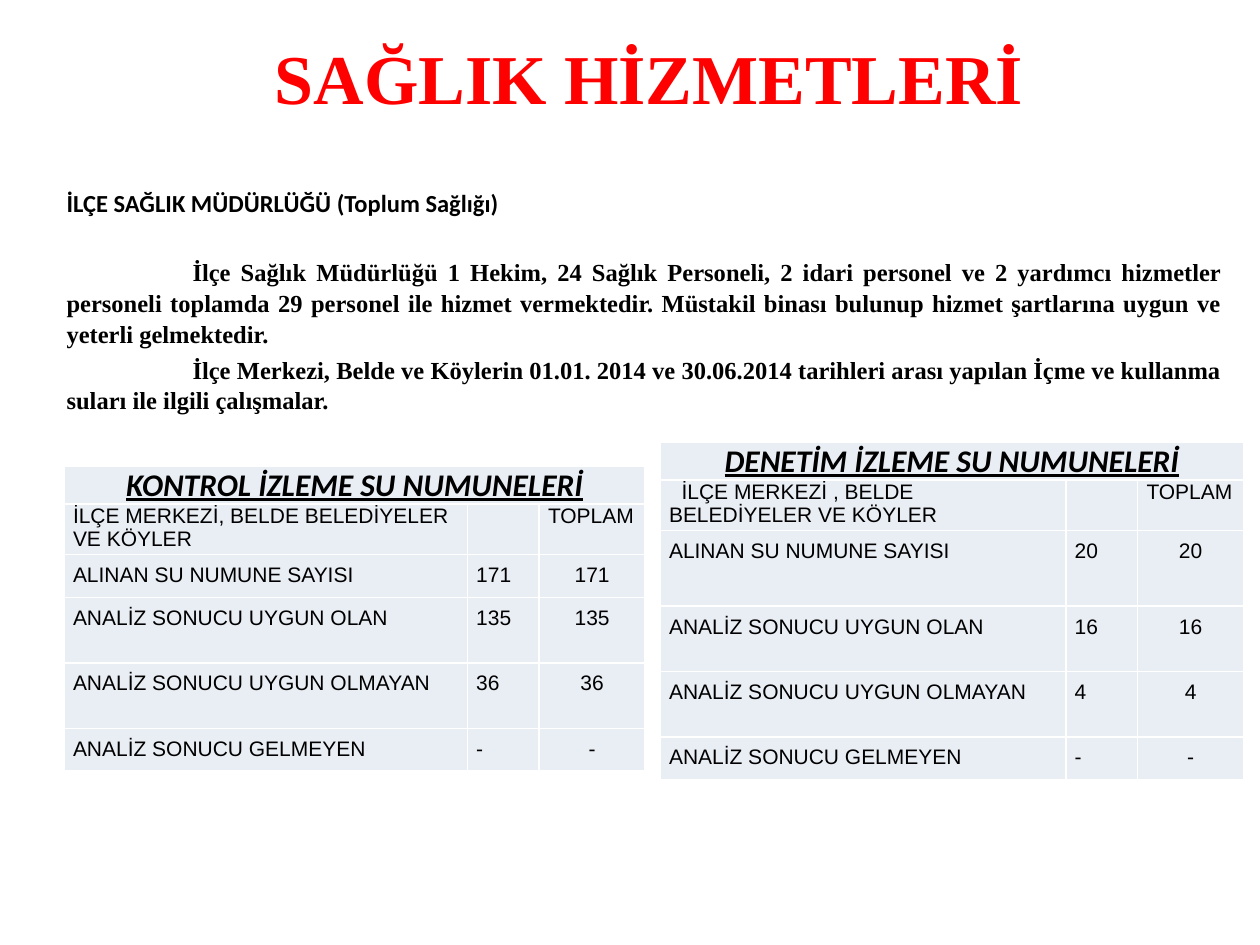
from pptx import Presentation
from pptx.dml.color import RGBColor
from pptx.enum.text import MSO_ANCHOR as Anchor, PP_ALIGN as Align
from pptx.util import Inches, Pt

COLORS = {"title": "FF0000", "text": "000000", "cell": "E9EDF4"}
SERIF, SANS, BODY = "Times New Roman", "Arial", "Calibri"
INSET = 0.07
HEADING = "İLÇE SAĞLIK MÜDÜRLÜĞÜ (Toplum Sağlığı)"
STAFF = (
    "İlçe Sağlık Müdürlüğü 1 Hekim, 24 Sağlık Personeli, 2 idari personel ve 2 yardımcı "
    "hizmetler personeli toplamda 29 personel ile hizmet vermektedir. Müstakil binası "
    "bulunup hizmet şartlarına uygun ve yeterli gelmektedir."
)
WATER = (
    "İlçe Merkezi, Belde ve Köylerin 01.01. 2014 ve 30.06.2014 tarihleri arası yapılan "
    "İçme ve kullanma suları ile ilgili çalışmalar."
)
SAMPLE_LABELS = [
    "ALINAN SU NUMUNE SAYISI",
    "ANALİZ SONUCU UYGUN OLAN",
    "ANALİZ SONUCU UYGUN OLMAYAN",
    "ANALİZ SONUCU GELMEYEN",
]


def write(para, text, font, size, align, color="text", bold=False, indent=0):
    para.add_run().text = text
    para.alignment = align
    if indent:
        para._p.get_or_add_pPr().set("indent", str(Inches(indent)))
    para.font.name = font
    para.font.size = Pt(size)
    para.font.bold = bold
    para.font.color.rgb = RGBColor.from_string(COLORS[color])


def add_box(page, left, top, width, height):
    box = page.shapes.add_textbox(*map(Inches, (left, top, width, height)))
    box.text_frame.word_wrap = True
    return box.text_frame


def add_title(page):
    frame = add_box(page, 0.9, 0.21, 8.5, 0.79)
    frame.vertical_anchor = Anchor.MIDDLE
    write(frame.paragraphs[0], "SAĞLIK HİZMETLERİ", SERIF, 40, Align.CENTER, "title", True)


def add_body(page):
    frame = add_box(page, 0.43, 1.15, 9.37, 5.91)
    frame.margin_top = Inches(0.34)
    write(frame.paragraphs[0], HEADING, BODY, 14, Align.JUSTIFY, bold=True)
    for text, gap in ((STAFF, 22), (WATER, 2.8)):
        para = frame.add_paragraph()
        para.space_before = Pt(gap)
        para.line_spacing = 1.05
        write(para, text, SERIF, 14, Align.JUSTIFY, bold=True, indent=1)


def style_cell(cell, vertical_inset):
    cell.margin_left = cell.margin_right = Inches(INSET)
    cell.margin_top = cell.margin_bottom = Inches(vertical_inset)
    cell.fill.solid()
    cell.fill.fore_color.rgb = RGBColor.from_string(COLORS["cell"])


def add_samples(page, left, top, columns, rows, title, region, values, indent=0):
    frame = page.shapes.add_table(
        len(rows), len(columns), Inches(left), Inches(top),
        Inches(sum(columns)), Inches(sum(rows)),
    )
    table = frame.table
    table.first_row = table.horz_banding = False
    for column, width in zip(table.columns, columns):
        column.width = Inches(width)
    for row, height in zip(table.rows, rows):
        row.height = Inches(height)
    for index, row in enumerate(table.rows):
        for cell in row.cells:
            style_cell(cell, 0 if index < 2 else INSET)

    table.cell(0, 0).merge(table.cell(0, 2))
    para = table.cell(0, 0).text_frame.paragraphs[0]
    write(para, title, BODY, 18, Align.CENTER, bold=True)
    para.font.italic = para.font.underline = True

    write(table.cell(1, 0).text_frame.paragraphs[0], region, SANS, 12, Align.LEFT, indent=indent)
    write(table.cell(1, 2).text_frame.paragraphs[0], "TOPLAM", SANS, 12, Align.LEFT)
    for row, (label, value) in enumerate(zip(SAMPLE_LABELS, values), start=2):
        entries = ((label, Align.LEFT), (value, Align.LEFT), (value, Align.CENTER))
        for column, (text, align) in enumerate(entries):
            write(table.cell(row, column).text_frame.paragraphs[0], text, SANS, 12, align)


def main():
    deck = Presentation()
    deck.slide_width, deck.slide_height = Inches(10), Inches(7.5)
    page = deck.slides.add_slide(deck.slide_layouts[6])
    add_title(page)
    add_body(page)
    add_samples(
        page, 0.51, 3.7, (3.2, 0.57, 0.84), (0.3, 0.38, 0.33, 0.52, 0.52, 0.33),
        "KONTROL İZLEME SU NUMUNELERİ", "İLÇE MERKEZİ, BELDE BELEDİYELER VE KÖYLER",
        ("171", "135", "36", "-"),
    )
    add_samples(
        page, 5.24, 3.51, (3.22, 0.57, 0.84), (0.3, 0.38, 0.6, 0.52, 0.52, 0.33),
        "DENETİM İZLEME SU NUMUNELERİ", "İLÇE MERKEZİ , BELDE BELEDİYELER VE KÖYLER",
        ("20", "16", "4", "-"), indent=0.1,
    )
    deck.save("out.pptx")


if __name__ == "__main__":
    main()
